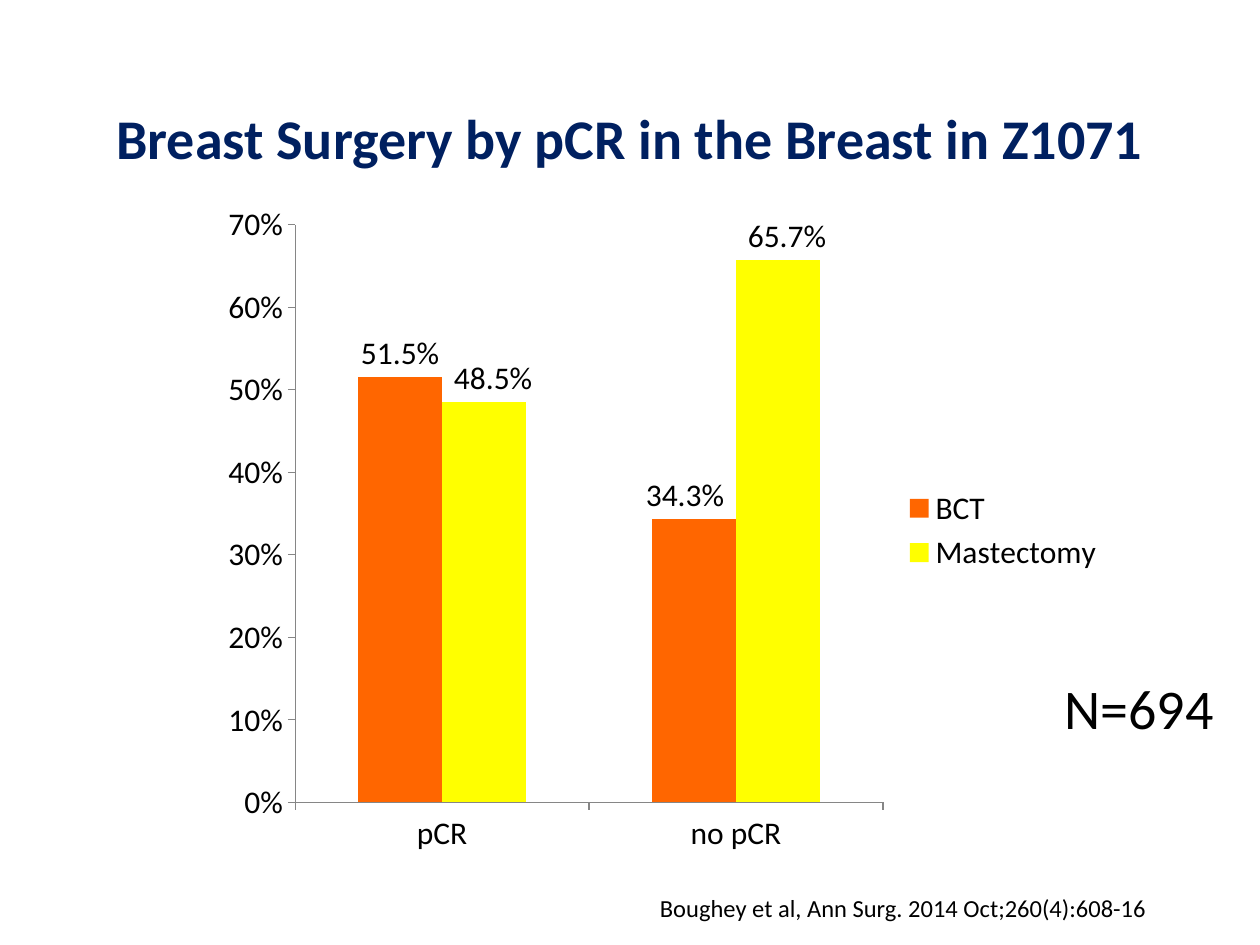
from lxml.etree import SubElement
from pptx import Presentation
from pptx.chart.data import CategoryChartData
from pptx.dml.color import RGBColor
from pptx.enum.chart import XL_CHART_TYPE, XL_LABEL_POSITION, XL_LEGEND_POSITION, XL_TICK_MARK
from pptx.enum.text import MSO_ANCHOR, MSO_AUTO_SIZE, PP_ALIGN
from pptx.oxml import parse_xml
from pptx.oxml.ns import nsdecls, qn
from pptx.util import Emu, Pt

SCALE = 914400 // 126
THEME = {
    "font": "Calibri",
    "title": RGBColor(0x00, 0x20, 0x60),
    "text": RGBColor(0, 0, 0),
    "axis": RGBColor(0x86, 0x86, 0x86),
    "BCT": RGBColor(0xFF, 0x66, 0x00),
    "Mastectomy": RGBColor(0xFF, 0xFF, 0x00),
    "large": Pt(32),
    "chart": Pt(18),
    "citation": Pt(14),
}


def px(*lengths):
    return [Emu(length * SCALE) for length in lengths]


def manual_layout(**values):
    layout = parse_xml(f"<c:layout {nsdecls('c')}><c:manualLayout/></c:layout>")
    for name, value in values.items():
        SubElement(layout[0], qn(f"c:{name}")).set("val", str(value))
    return layout


deck = Presentation()
deck.slide_width, deck.slide_height = px(1260, 945)
page = deck.slides.add_slide(deck.slide_layouts[6])

chart_data = CategoryChartData(number_format="0.0%")
chart_data.categories = ["pCR", "no pCR"]
chart_data.add_series("BCT", [0.515, 0.343])
chart_data.add_series("Mastectomy", [0.485, 0.657])
chart = page.shapes.add_chart(
    XL_CHART_TYPE.COLUMN_CLUSTERED, *px(210, 193, 907, 675), chart_data
).chart
chart.has_title = False
chart.has_legend = True
chart.legend.position = XL_LEGEND_POSITION.RIGHT
chart.legend.include_in_layout = False
font_format = {"name": THEME["font"], "size": THEME["chart"]}
for name, value in font_format.items():
    setattr(chart.font, name, value)
chart.font.color.rgb = THEME["text"]

for axis in (chart.category_axis, chart.value_axis):
    axis.has_major_gridlines = False
    axis.major_tick_mark = XL_TICK_MARK.OUTSIDE
    axis.format.line.color.rgb = THEME["axis"]
    axis.format.line.width = Pt(0.75)
value_format = {"minimum_scale": 0, "maximum_scale": 0.7, "major_unit": 0.1}
for name, value in value_format.items():
    setattr(chart.value_axis, name, value)
chart.value_axis.tick_labels.number_format = "0%"
chart.value_axis.tick_labels.number_format_is_linked = False

plot = chart.plots[0]
plot.vary_by_categories = False
plot.gap_width = 150
plot.overlap = 0
plot_area = chart._chartSpace.chart.plotArea
for old_layout in plot_area.findall(qn("c:layout")):
    plot_area.remove(old_layout)
plot_area.insert(0, manual_layout(
    layoutTarget="inner", xMode="edge", yMode="edge", x=0.094, y=0.047, w=0.648, h=0.856
))

label_shifts = {"BCT": {1: -0.01}, "Mastectomy": {0: 0.01, 1: 0.01}}
label_format = {
    "show_value": True,
    "number_format": "0.0%",
    "number_format_is_linked": False,
    "position": XL_LABEL_POSITION.OUTSIDE_END,
}
for series in plot.series:
    series.format.fill.solid()
    series.format.fill.fore_color.rgb = THEME[series.name]
    series.invert_if_negative = False
    labels = series.data_labels
    for name, value in label_format.items():
        setattr(labels, name, value)
    labels.font.size = THEME["chart"]
    for index, shift in label_shifts[series.name].items():
        series.points[index].data_label.position = XL_LABEL_POSITION.OUTSIDE_END
    for label in labels._element.findall(qn("c:dLbl")):
        index = int(label.find(qn("c:idx")).get("val"))
        label.insert(1, manual_layout(x=label_shifts[series.name][index], y=0))

texts = [
    ("Breast Surgery by pCR in the Breast in Z1071", (32, 45, 1196, 193),
     "large", "title", True, PP_ALIGN.CENTER, MSO_ANCHOR.MIDDLE, True),
    ("Boughey et al, Ann Surg. 2014 Oct;260(4):608-16", (489, 887, 670, 43),
     "citation", "text", False, PP_ALIGN.RIGHT, MSO_ANCHOR.TOP, True),
    ("N=694", (1052, 667, 176, 81),
     "large", "text", False, PP_ALIGN.LEFT, MSO_ANCHOR.TOP, False),
]
for words, place, size, color, bold, alignment, anchor, wrap in texts:
    frame = page.shapes.add_textbox(*px(*place)).text_frame
    frame_format = {
        "word_wrap": wrap,
        "vertical_anchor": anchor,
        "auto_size": MSO_AUTO_SIZE.NONE if bold else MSO_AUTO_SIZE.SHAPE_TO_FIT_TEXT,
    }
    for name, value in frame_format.items():
        setattr(frame, name, value)
    para = frame.paragraphs[0]
    para.alignment = alignment
    if bold:
        para.line_spacing = 0.9
    span = para.add_run()
    span.text = words
    span_format = {"name": THEME["font"], "size": THEME[size], "bold": bold}
    for name, value in span_format.items():
        setattr(span.font, name, value)
    span.font.color.rgb = THEME[color]

deck.save("out.pptx")
